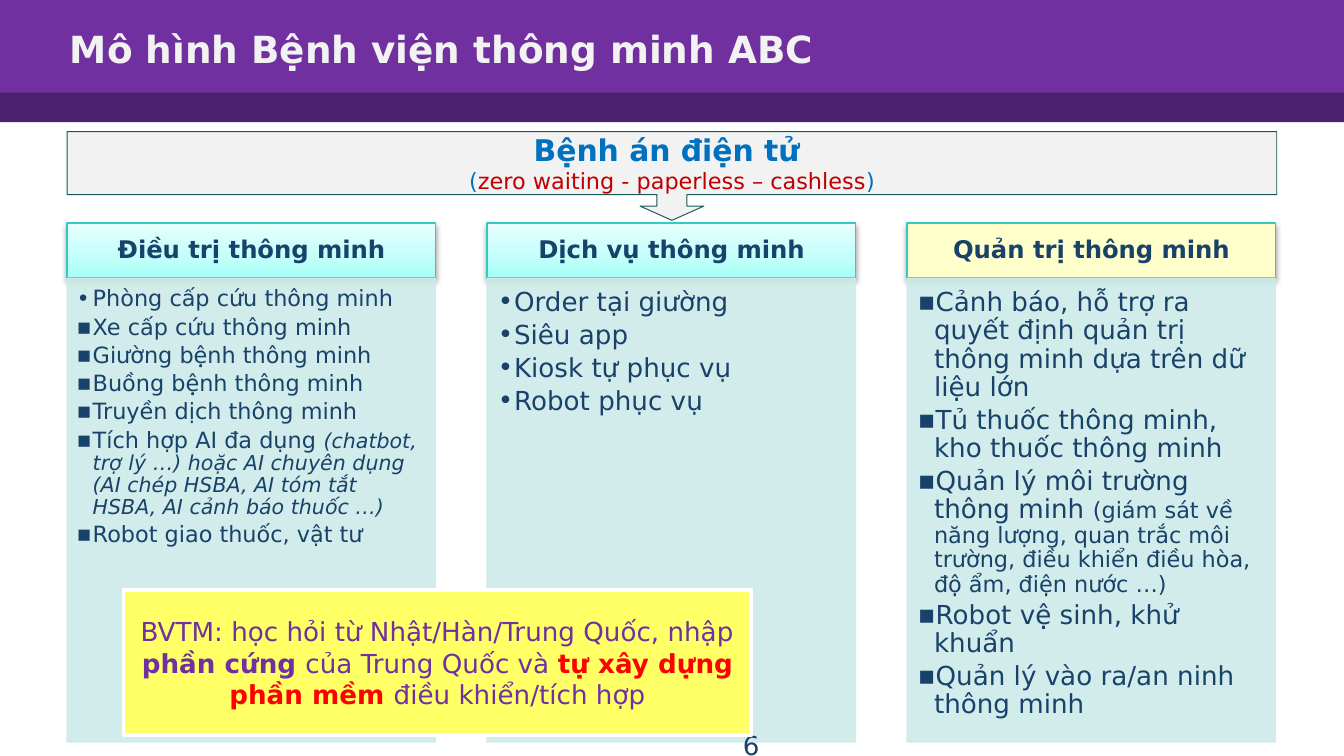
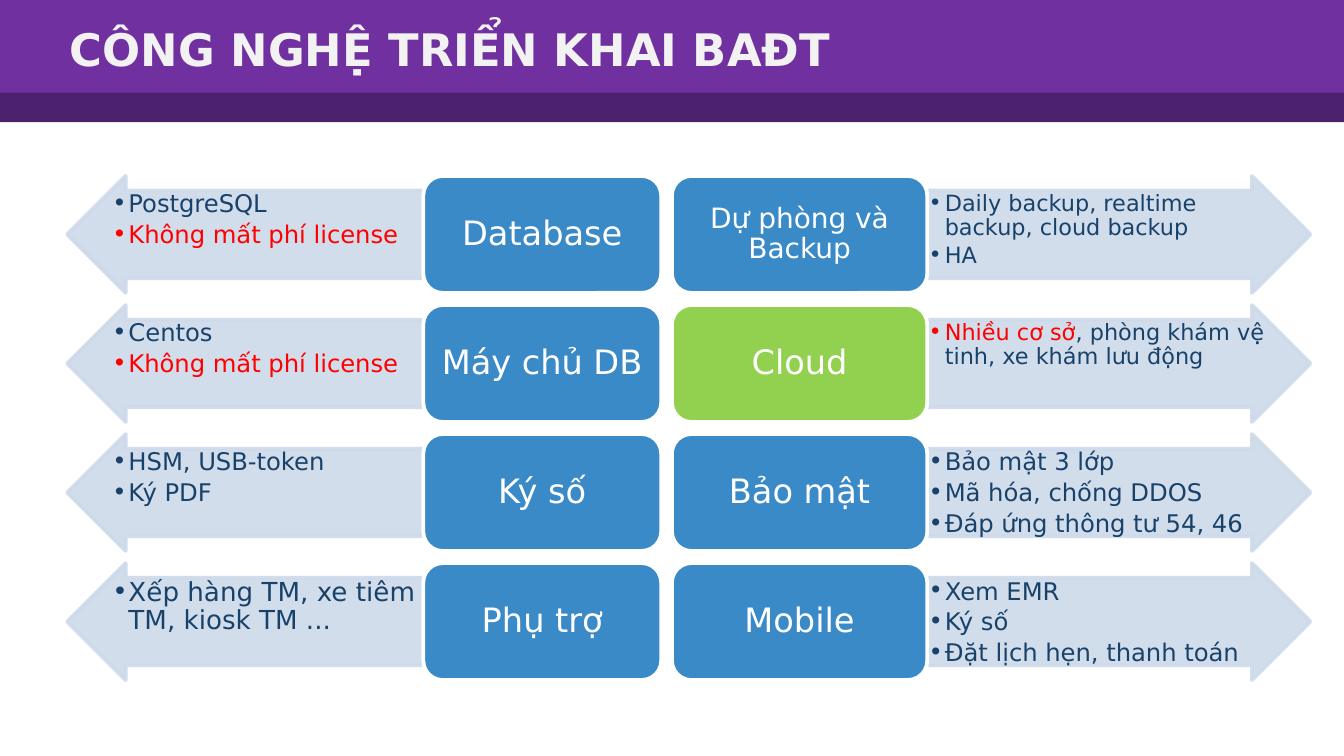
from dataclasses import dataclass

from lxml import etree
from pptx import Presentation
from pptx import util as u
from pptx.dml import color as dml
from pptx.enum import shapes, text
from pptx.oxml import ns, parse_xml
from pptx.shapes.autoshape import Shape
from pptx.slide import Slide
from pptx.text.text import TextFrame

Box = tuple[float, float, float, float]


@dataclass(frozen=True)
class Theme:
    font: str = "DejaVu Sans"
    purple: str = "7030A0"
    dark_purple: str = "4C216D"
    title: str = "F2F2F2"
    navy: str = "19426B"
    red: str = "FF0000"
    dark_red: str = "C00000"
    blue: str = "0070C0"
    white: str = "FFFFFF"
    panel: str = "CEEBE9"
    turquoise: str = "35C9C2"
    cyan_stops: tuple[tuple[int, str], ...] = ((0, "A6FFF8"), (35, "C0FFFA"), (100, "E7FFFD"))
    cream: str = "FFFFCC"
    yellow: str = "FFFF66"
    callout: str = "F2F2F2"
    callout_line: str = "175855"
    arrow: str = "CEDAEB"
    topic: str = "398AC7"
    green: str = "92D050"
    title_small: int = 20
    title_large: int = 24
    topic_size: int = 18
    topic_small: int = 15
    callout_size: int = 16
    large: int = 14
    medium: int = 13
    small: int = 12
    tiny: int = 11


THEME = Theme()
DOT, SQUARE = "•", "▪"


@dataclass(frozen=True)
class Run:
    """A stretch of text; unset values come from the surrounding text."""
    text: str
    size: int | None = None
    color: str | None = None
    bold: bool = False
    italic: bool = False


@dataclass(frozen=True)
class Item:
    runs: tuple[Run, ...]
    bullet: str = ""


@dataclass(frozen=True)
class Column:
    heading: str
    items: tuple[Item, ...]
    size: int = THEME.large
    insets: Box = (0.08, 0.08, 0.11, 0.12)
    heading_fill: str | None = None


@dataclass(frozen=True)
class Topic:
    name: str
    items: tuple[Item, ...]
    size: int = THEME.medium
    fill: str = THEME.topic
    name_size: int = THEME.topic_size


@dataclass(frozen=True)
class Side:
    """One half of the technology slide, with arrows pointing outwards."""
    arrow: shapes.MSO_SHAPE
    arrow_left: float
    arrow_width: float
    topic_left: float
    topic_width: float
    topics: tuple[Topic, ...]


def item(*parts: str | Run, bullet: str = DOT) -> Item:
    return Item(tuple(Run(part) if isinstance(part, str) else part for part in parts), bullet)


def items(*lines: str, bullet: str = DOT) -> tuple[Item, ...]:
    return tuple(item(line, bullet=bullet) for line in lines)


def rgb(value: str) -> dml.RGBColor:
    return dml.RGBColor.from_string(value)


def write(frame: TextFrame, content: tuple[Item, ...] | str, *, size: int,
          color: str = THEME.navy, bold: bool = False,
          align: text.PP_ALIGN = text.PP_ALIGN.LEFT,
          anchor: text.MSO_ANCHOR = text.MSO_ANCHOR.TOP,
          insets: Box = (0.1, 0.05, 0.1, 0.05), spacing: float = 1.0) -> None:
    frame.word_wrap = True
    frame.auto_size = text.MSO_AUTO_SIZE.NONE
    frame.vertical_anchor = anchor
    (frame.margin_left, frame.margin_top,
     frame.margin_right, frame.margin_bottom) = map(u.Inches, insets)
    lines = (item(content, bullet=""),) if isinstance(content, str) else content
    for index, line in enumerate(lines):
        paragraph = frame.add_paragraph() if index else frame.paragraphs[0]
        paragraph.alignment = align
        paragraph.line_spacing = spacing
        if line.bullet:
            add_bullet(paragraph, line.bullet)
            paragraph.space_after = u.Pt(0.18 * size)
        for part in line.runs:
            run = paragraph.add_run()
            run.text = part.text.rstrip("\n")
            font = run.font
            font.name = THEME.font
            font.size = u.Pt(part.size or size)
            font.bold = bold or part.bold
            font.italic = part.italic
            font.color.rgb = rgb(part.color or color)
            if part.text.endswith("\n"):
                paragraph.add_line_break()


def add_bullet(paragraph, mark: str) -> None:
    paragraph.level = 1
    properties = paragraph._p.get_or_add_pPr()
    properties.set("marL", str(u.Inches(0.12)))
    properties.set("indent", str(-u.Inches(0.12)))
    etree.SubElement(properties, ns.qn("a:buFont")).set("typeface", THEME.font)
    etree.SubElement(properties, ns.qn("a:buChar")).set("char", mark)


def add_block(slide: Slide, kind: shapes.MSO_SHAPE, box: Box, fill: str | None,
              line: str | None = None, width: float = 0.75, opacity: int = 100) -> Shape:
    """Add a preset shape; without a fill colour it gets the cyan gradient."""
    shape = slide.shapes.add_shape(kind, *map(u.Inches, box))
    shape.shadow.inherit = False
    if fill:
        shape.fill.solid()
        shape.fill.fore_color.rgb = rgb(fill)
    else:
        fill_gradient(shape)
    if line:
        shape.line.color.rgb = rgb(line)
        shape.line.width = u.Pt(width)
    else:
        shape.line.fill.background()
    if opacity < 100:
        for color in shape.element.spPr.iter(ns.qn("a:srgbClr")):
            etree.SubElement(color, ns.qn("a:alpha")).set("val", str(opacity * 1000))
    return shape


def fill_gradient(shape: Shape) -> None:
    stops = "".join(f'<a:gs pos="{position * 1000}"><a:srgbClr val="{color}"/></a:gs>'
                    for position, color in THEME.cyan_stops)
    shape.fill.background()
    properties = shape.element.spPr
    properties.replace(properties.find(ns.qn("a:noFill")), parse_xml(
        f'<a:gradFill {ns.nsdecls("a")} rotWithShape="1"><a:gsLst>{stops}</a:gsLst>'
        '<a:lin ang="16200000" scaled="0"/></a:gradFill>'))


def add_shadow(shape: Shape) -> None:
    shape.element.spPr.find(ns.qn("a:effectLst")).append(parse_xml(
        f'<a:outerShdw {ns.nsdecls("a")} blurRad="{u.Pt(3.1)}" dist="{u.Pt(1.6)}" dir="5400000" '
        'rotWithShape="0"><a:srgbClr val="000000"><a:alpha val="38000"/></a:srgbClr>'
        '</a:outerShdw>'))


def add_title_bands(slide: Slide) -> None:
    """Draw both bands and hand them to the layout, so that all slides share them."""
    tree = slide.slide_layout.shapes.element
    bands = (((0, 0.65, 10, 0.26), THEME.dark_purple), ((0, 0, 10, 0.69), THEME.purple))
    for position, (box, color) in enumerate(bands, start=2):
        band = add_block(slide, shapes.MSO_SHAPE.RECTANGLE, box, color)
        tree.insert(position, band.element)


def add_titled_slide(presentation, title: str, size: int) -> Slide:
    slide = presentation.slides.add_slide(presentation.slide_layouts[5])
    placeholder = slide.shapes.title
    (placeholder.left, placeholder.top,
     placeholder.width, placeholder.height) = map(u.Inches, (0.42, 0.13, 8.08, 0.46))
    write(placeholder.text_frame, title, size=size, color=THEME.title, bold=True,
          anchor=text.MSO_ANCHOR.MIDDLE)
    return slide


def add_column(slide: Slide, column: Column, left: float) -> None:
    width = 2.74
    heading = add_block(slide, shapes.MSO_SHAPE.RECTANGLE, (left, 1.66, width, 0.41),
                        column.heading_fill, THEME.turquoise)
    add_shadow(heading)
    write(heading.text_frame, column.heading, size=THEME.medium, bold=True,
          align=text.PP_ALIGN.CENTER, anchor=text.MSO_ANCHOR.MIDDLE,
          insets=(0.1, 0.06, 0.1, 0.06), spacing=0.9)
    panel = add_block(slide, shapes.MSO_SHAPE.RECTANGLE, (left, 2.07, width, 3.45),
                      THEME.panel, THEME.panel, opacity=90)
    write(panel.text_frame, column.items, size=column.size, insets=column.insets, spacing=0.9)


def add_topic(slide: Slide, side: Side, topic: Topic, top: float) -> None:
    height = 0.87
    arrow = add_block(slide, side.arrow, (side.arrow_left, top, side.arrow_width, height),
                      THEME.arrow, THEME.arrow, 2, opacity=90)
    arrow.adjustments[0], arrow.adjustments[1] = 0.75, 0.5
    write(arrow.text_frame, topic.items, size=topic.size, insets=(0.01,) * 4, spacing=0.9)
    label = add_block(slide, shapes.MSO_SHAPE.ROUNDED_RECTANGLE,
                      (side.topic_left, top, side.topic_width, height),
                      topic.fill, THEME.white, 2)
    write(label.text_frame, topic.name, size=topic.name_size, color=THEME.white,
          align=text.PP_ALIGN.CENTER, anchor=text.MSO_ANCHOR.MIDDLE,
          insets=(0.07, 0.04, 0.07, 0.04), spacing=0.9)


COLUMNS = (
    Column("Điều trị thông minh", (
        item("Phòng cấp cứu thông minh"),
        *items("Xe cấp cứu thông minh", "Giường bệnh thông minh", "Buồng bệnh thông minh",
               "Truyền dịch thông minh", bullet=SQUARE),
        item("Tích hợp AI đa dụng ",
             Run("(chatbot, trợ lý …) hoặc AI chuyên dụng (AI chép HSBA, AI tóm tắt HSBA, "
                 "AI cảnh báo thuốc …)", THEME.tiny, italic=True), bullet=SQUARE),
        item("Robot giao thuốc, vật tư", bullet=SQUARE),
    ), THEME.small, (0.07, 0.07, 0.09, 0.1)),
    Column("Dịch vụ thông minh",
           items("Order tại giường", "Siêu app", "Kiosk tự phục vụ", "Robot phục vụ")),
    Column("Quản trị thông minh", (
        *items("Cảnh báo, hỗ trợ ra quyết định quản trị thông minh dựa trên dữ liệu lớn",
               "Tủ thuốc thông minh, kho thuốc thông minh", bullet=SQUARE),
        item("Quản lý môi trường thông minh ",
             Run("(giám sát về năng lượng, quan trắc môi trường, điều khiển điều hòa, "
                 "độ ẩm, điện nước …)", THEME.small), bullet=SQUARE),
        *items("Robot vệ sinh, khử khuẩn", "Quản lý vào ra/an ninh thông minh", bullet=SQUARE),
    ), heading_fill=THEME.cream),
)

HARDWARE_NOTE = (item(
    "BVTM: học hỏi từ Nhật/Hàn/Trung Quốc, nhập ", Run("phần cứng ", bold=True),
    "của Trung Quốc và ", Run("tự xây dựng phần mềm ", color=THEME.red, bold=True),
    "điều khiển/tích hợp", bullet=""),)

RECORD_CALLOUT = (item(
    Run("Bệnh án điện tử \n", THEME.callout_size, bold=True), "(",
    Run("zero waiting - paperless – cashless", color=THEME.dark_red), ")", bullet=""),)

NO_FEE = item(Run("Không mất phí license", color=THEME.red))

SIDES = (
    Side(shapes.MSO_SHAPE.LEFT_ARROW, 0.5, 2.65, 3.15, 1.77, (
        Topic("Database", (item("PostgreSQL"), NO_FEE)),
        Topic("Máy chủ DB", (item("Centos"), NO_FEE)),
        Topic("Ký số", items("HSM, USB-token", "Ký PDF")),
        Topic("Phụ trợ", items("Xếp hàng TM, xe tiêm TM, kiosk TM ..."), THEME.large),
    )),
    Side(shapes.MSO_SHAPE.RIGHT_ARROW, 6.9, 2.85, 5, 1.9, (
        Topic("Dự phòng và Backup", items("Daily backup, realtime backup, cloud backup", "HA"),
              THEME.small, name_size=THEME.topic_small),
        Topic("Cloud", (item(Run("Nhiều cơ sở", color=THEME.red),
                             ", phòng khám vệ tinh, xe khám lưu động"),),
              THEME.small, THEME.green),
        Topic("Bảo mật", items("Bảo mật 3 lớp", "Mã hóa, chống DDOS", "Đáp ứng thông tư 54, 46")),
        Topic("Mobile", items("Xem EMR", "Ký số", "Đặt lịch hẹn, thanh toán")),
    )),
)


def build_hospital_slide(presentation) -> None:
    slide = add_titled_slide(presentation, "Mô hình Bệnh viện thông minh ABC", THEME.title_small)
    add_title_bands(slide)
    for index, column in enumerate(COLUMNS):
        add_column(slide, column, 0.5 + 6.25 * index / 2)
    number = slide.shapes.add_textbox(*map(u.Inches, (3.42, 5.38, 2.33, 0.19)))
    write(number.text_frame, "6", size=THEME.large, align=text.PP_ALIGN.RIGHT)
    note = add_block(slide, shapes.MSO_SHAPE.RECTANGLE, (0.92, 4.39, 4.67, 1.08),
                     THEME.yellow, THEME.white, 2)
    write(note.text_frame, HARDWARE_NOTE, size=THEME.large, color=THEME.purple,
          align=text.PP_ALIGN.CENTER, anchor=text.MSO_ANCHOR.MIDDLE)
    callout = add_block(slide, shapes.MSO_SHAPE.DOWN_ARROW_CALLOUT, (0.5, 0.98, 9, 0.66),
                        THEME.callout, THEME.callout_line, 0.5)
    for index, value in enumerate((0.34, 0.36, 0.16, 0.71)):
        callout.adjustments[index] = value
    write(callout.text_frame, RECORD_CALLOUT, size=THEME.small, color=THEME.blue,
          align=text.PP_ALIGN.CENTER, anchor=text.MSO_ANCHOR.MIDDLE)


def build_technology_slide(presentation) -> None:
    slide = add_titled_slide(presentation, "CÔNG NGHỆ TRIỂN KHAI BAĐT", THEME.title_large)
    for side in SIDES:
        for row, topic in enumerate(side.topics):
            add_topic(slide, side, topic, 1.31 + 0.96 * row)


def main() -> None:
    presentation = Presentation()
    presentation.slide_width = u.Inches(10)
    presentation.slide_height = u.Inches(10 * 9 / 16)
    build_hospital_slide(presentation)
    build_technology_slide(presentation)
    presentation.save("out.pptx")


if __name__ == "__main__":
    main()
